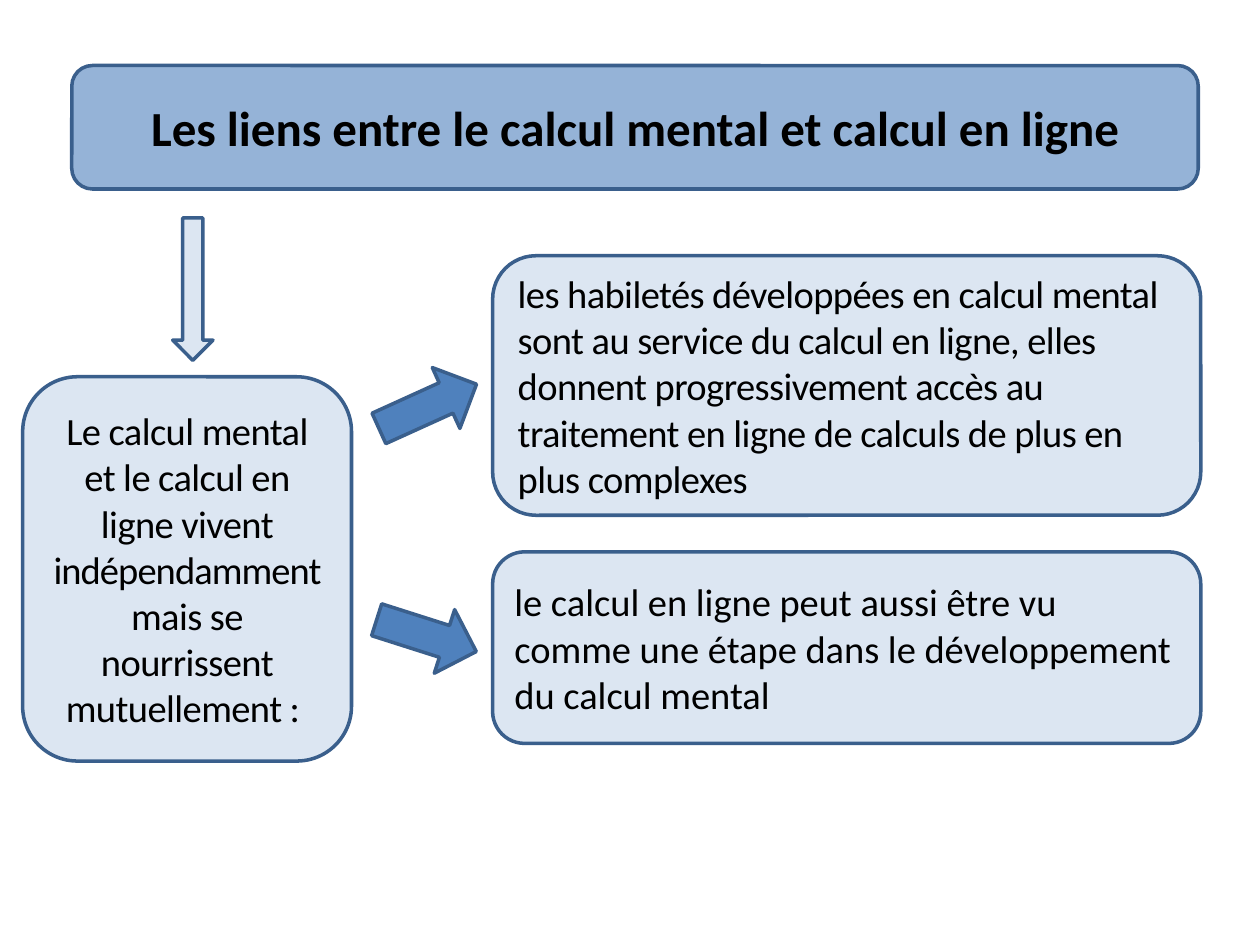
from pptx import Presentation
from pptx import util as u
from pptx.dml.color import RGBColor
from pptx.enum import shapes, text

BLACK = RGBColor(0x00, 0x00, 0x00)
EDGE = RGBColor(0x3A, 0x5F, 0x8C)
HEAD = RGBColor(0x95, 0xB3, 0xD7)
PALE = RGBColor(0xDC, 0xE6, 0xF2)
BLUE = RGBColor(0x4F, 0x81, 0xBD)

KIND = shapes.MSO_SHAPE
LEFT, MID = text.PP_ALIGN.LEFT, text.PP_ALIGN.CENTER


def add_form(slide, kind, area, fill, turn=0):
    """Add a filled, outlined preset shape; area is in inches."""
    form = slide.shapes.add_shape(kind, *(u.Inches(n) for n in area))
    form.shadow.inherit = False
    form.fill.solid()
    form.fill.fore_color.rgb = fill
    form.line.color.rgb = EDGE
    form.line.width = u.Pt(2)
    form.rotation = turn
    return form


def add_run(para, words, size, bold, space):
    """Add one run; space is the letter spacing in points."""
    run = para.add_run()
    run.text = words
    font = run.font
    font.name = "Calibri"
    font.size = u.Pt(size)
    font.bold = bold
    font.color.rgb = BLACK
    if space:
        run._r.get_or_add_rPr().set("spc", str(round(space * 100)))


def add_box(slide, area, fill, runs, align=LEFT, size=22, bold=False):
    """Add a rounded box holding (words, spacing) runs."""
    frame = add_form(slide, KIND.ROUNDED_RECTANGLE, area, fill).text_frame
    frame.word_wrap = True
    frame.vertical_anchor = text.MSO_ANCHOR.MIDDLE
    para = frame.paragraphs[0]
    para.alignment = align
    for words, space in runs:
        add_run(para, words, size, bold, space)


def main():
    deck = Presentation()
    deck.slide_width, deck.slide_height = u.Inches(10), u.Inches(7.5)
    slide = deck.slides.add_slide(deck.slide_layouts[6])

    # Title and the arrow below it
    add_box(slide, (0.57, 0.52, 8.94, 0.98), HEAD,
            [("Les liens entre le calcul mental et calcul en ligne", 0)],
            MID, 28, True)
    add_form(slide, KIND.DOWN_ARROW, (1.37, 1.73, 0.32, 1.13), PALE)

    # Main idea
    add_box(slide, (0.18, 2.99, 2.61, 3.05), PALE,
            [("Le calcul mental et le calcul en ligne vivent ", -0.3),
             ("indépendamment ", -0.5),
             ("mais se nourrissent mutuellement : ", -0.3)], MID)

    # Two links, each with its arrow
    add_box(slide, (3.91, 2.03, 5.62, 2.06), PALE,
            [("les habiletés développées en calcul mental sont au service "
              "du calcul en ligne, elles donnent progressivement accès au "
              "traitement en ligne de calculs de plus en plus complexes",
              -0.3)])
    add_form(slide, KIND.RIGHT_ARROW, (2.97, 2.96, 0.85, 0.53), BLUE, 335.6)
    add_form(slide, KIND.RIGHT_ARROW, (2.97, 4.78, 0.83, 0.53), BLUE, 17.7)
    add_box(slide, (3.91, 4.38, 5.62, 1.52), PALE,
            [("le calcul en ligne peut aussi être vu comme une étape dans "
              "le développement du calcul mental", 0)])

    deck.save("out.pptx")


if __name__ == "__main__":
    main()
